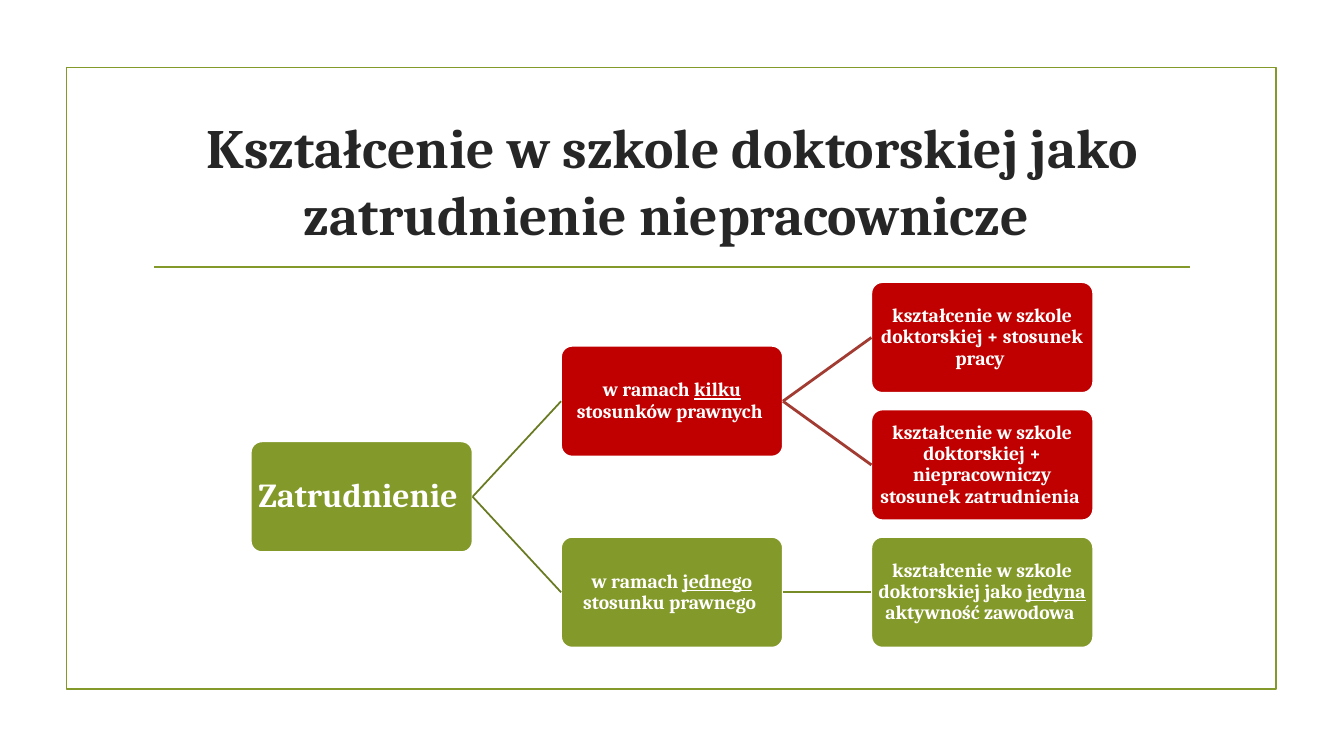
from dataclasses import dataclass

from lxml.etree import SubElement
from pptx import Presentation
from pptx.dml.color import RGBColor
from pptx.enum.shapes import MSO_CONNECTOR, MSO_SHAPE
from pptx.enum.text import MSO_ANCHOR, MSO_AUTO_SIZE, PP_ALIGN
from pptx.oxml.ns import qn
from pptx.util import Cm, Pt


@dataclass(frozen=True)
class Theme:
    font: str = "Cambria"
    ink: RGBColor = RGBColor(0x26, 0x26, 0x26)
    white: RGBColor = RGBColor(0xFF, 0xFF, 0xFF)
    green: RGBColor = RGBColor(0x83, 0x99, 0x2A)
    red: RGBColor = RGBColor(0xC0, 0x00, 0x00)
    root_link: RGBColor = RGBColor(0x69, 0x7B, 0x22)
    red_link: RGBColor = RGBColor(0xA2, 0x3C, 0x33)
    green_link: RGBColor = RGBColor(0x77, 0x8B, 0x26)
    title_size: Pt = Pt(39.6)
    root_size: Pt = Pt(24)
    node_size: Pt = Pt(14)
    thin: Pt = Pt(1.25)
    thick: Pt = Pt(2)


theme = Theme()


def style_runs(para, size, color):
    para.alignment = PP_ALIGN.CENTER
    for span in para.runs:
        span.font.name = theme.font
        span.font.size = size
        span.font.bold = True
        span.font.color.rgb = color


def add_line(page, start, end, color, width):
    line = page.shapes.add_connector(MSO_CONNECTOR.STRAIGHT, *start, *end)
    line.line.color.rgb = color
    line.line.width = width
    SubElement(line._element.spPr, qn("a:effectLst"))
    return line


deck = Presentation()
deck.slide_width, deck.slide_height = Cm(33.87), Cm(19.05)
page = deck.slides.add_slide(deck.slide_layouts[5])

# Frame, rule and title
frame = page.shapes.add_shape(MSO_SHAPE.RECTANGLE, Cm(1.68), Cm(1.7), Cm(30.48), Cm(15.67))
frame.shadow.inherit = False
frame.fill.background()
frame.line.color.rgb = theme.green
frame.line.width = theme.thin

add_line(page, (Cm(3.89), Cm(6.73)), (Cm(30), Cm(6.73)), theme.green, theme.thin)

title = page.shapes.title
title.left, title.top, title.width, title.height = Cm(3.6), Cm(2.72), Cm(26.67), Cm(3.63)
title.text_frame.text = "Kształcenie w szkole doktorskiej jako zatrudnienie niepracownicze "
title.text_frame.word_wrap = True
title.text_frame.auto_size = MSO_AUTO_SIZE.NONE
title.text_frame.vertical_anchor = MSO_ANCHOR.MIDDLE
style_runs(title.text_frame.paragraphs[0], theme.title_size, theme.ink)

# Tree: a parent sits midway between its children, so rows can be fractions
LEFT, TOP = 6.32, 7.11
COLUMN_STEP, ROW_STEP = 7.82, 3.21
BOX_WIDTH, BOX_HEIGHT = 5.59, 2.79

# name: column, row, fill, text size, text pieces (every second one underlined)
nodes = {
    "root": (0, 1.25, theme.green, theme.root_size, ["Zatrudnienie "]),
    "several": (1, 0.5, theme.red, theme.node_size,
                ["w ramach ", "kilku", " stosunków prawnych "]),
    "single": (1, 2, theme.green, theme.node_size,
               ["w ramach ", "jednego", " stosunku prawnego "]),
    "employment": (2, 0, theme.red, theme.node_size,
                   ["kształcenie w szkole doktorskiej + stosunek pracy "]),
    "other": (2, 1, theme.red, theme.node_size,
              ["kształcenie w szkole doktorskiej + niepracowniczy stosunek zatrudnienia "]),
    "only": (2, 2, theme.green, theme.node_size,
             ["kształcenie w szkole doktorskiej jako ", "jedyna", " aktywność zawodowa "]),
}

boxes = {}
for name, (column, row, fill, size, pieces) in nodes.items():
    box = page.shapes.add_shape(
        MSO_SHAPE.ROUNDED_RECTANGLE,
        Cm(LEFT + column * COLUMN_STEP), Cm(TOP + row * ROW_STEP),
        Cm(BOX_WIDTH), Cm(BOX_HEIGHT))
    box.adjustments[0] = 0.1
    box.shadow.inherit = False
    box.fill.solid()
    box.fill.fore_color.rgb = fill
    box.line.color.rgb = theme.white
    box.line.width = theme.thin

    text = box.text_frame
    text.word_wrap = True
    text.vertical_anchor = MSO_ANCHOR.MIDDLE
    text.margin_left = text.margin_right = Cm(0.03)
    text.margin_top = text.margin_bottom = Cm(0.03)
    para = text.paragraphs[0]
    para.line_spacing = 0.9
    for index, piece in enumerate(pieces):
        span = para.add_run()
        span.text = piece
        span.font.underline = index % 2 == 1
    style_runs(para, size, theme.white)
    boxes[name] = box

links = [
    ("root", "several", theme.root_link, theme.thin),
    ("root", "single", theme.root_link, theme.thin),
    ("several", "employment", theme.red_link, theme.thick),
    ("several", "other", theme.red_link, theme.thick),
    ("single", "only", theme.green_link, theme.thin),
]
for parent, child, color, width in links:
    link = add_line(page, (0, 0), (0, 0), color, width)
    link.begin_connect(boxes[parent], 3)
    link.end_connect(boxes[child], 1)

deck.save("out.pptx")
